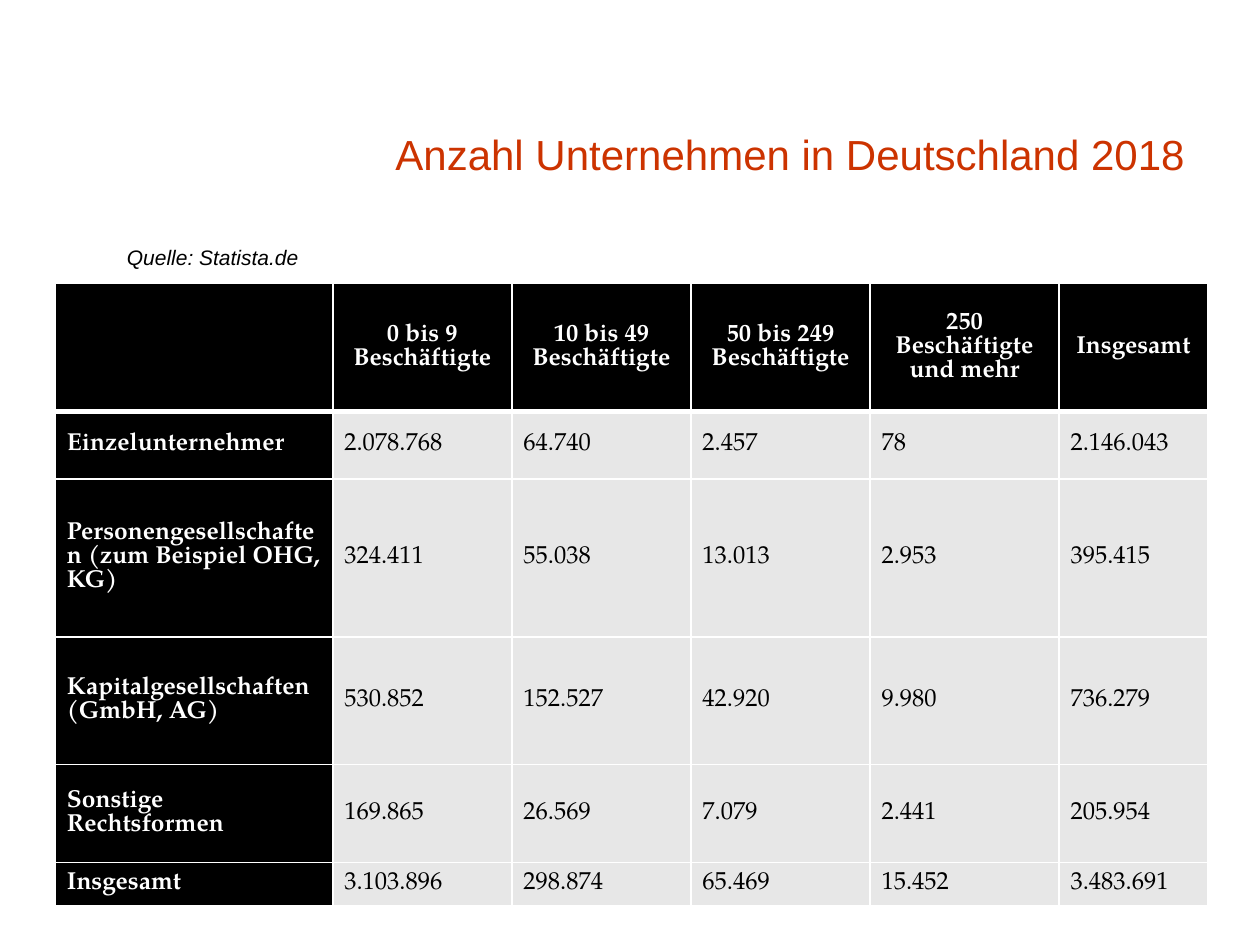
from dataclasses import dataclass

from lxml import etree
from pptx import Presentation
from pptx.dml.color import RGBColor
from pptx.enum import text as t
from pptx.oxml import ns
from pptx.util import Cm, Pt


@dataclass(frozen=True)
class Theme:
    heading_font: str = "Arial"
    table_font: str = "TeX Gyre Pagella"
    accent: str = "CC3300"
    dark: str = "000000"
    light: str = "FFFFFF"
    grey: str = "E7E7E7"
    title_size: int = 24
    source_size: int = 12
    table_size: int = 14


theme = Theme()


def add_run(paragraph, wording, font, size, color, bold=False, italic=False):
    run = paragraph.add_run()
    run.text = wording
    run.font.name, run.font.size = font, Pt(size)
    run.font.bold, run.font.italic = bold, italic
    run.font.color.rgb = RGBColor.from_string(color)


def add_border(cell, side, width):
    line = etree.SubElement(cell._tc.get_or_add_tcPr(), ns.qn(f"a:ln{side}"), w=str(Pt(width)))
    fill = etree.SubElement(line, ns.qn("a:solidFill"))
    etree.SubElement(fill, ns.qn("a:srgbClr"), val=theme.light)


presentation = Presentation()
presentation.slide_width, presentation.slide_height = Cm(25.4), Cm(19.05)
slide = presentation.slides.add_slide(presentation.slide_layouts[6])

# Title
title = slide.shapes.add_textbox(Cm(5.31), Cm(1.07), Cm(18.82), Cm(2.67)).text_frame
title.word_wrap = True
title.vertical_anchor = t.MSO_ANCHOR.BOTTOM
heading = title.paragraphs[0]
heading.alignment = t.PP_ALIGN.RIGHT
heading.line_spacing = 0.9
add_run(heading, "Anzahl Unternehmen in Deutschland 2018",
        theme.heading_font, theme.title_size, theme.accent)

# Source line
source = slide.shapes.add_textbox(Cm(2.31), Cm(4.8), Cm(12.7), Cm(0.76)).text_frame
source.word_wrap = True
add_run(source.paragraphs[0], "Quelle: Statista.de",
        theme.heading_font, theme.source_size, theme.dark, italic=True)

# Companies by legal form and number of employees
companies = [
    ["", "0 bis 9 Beschäftigte", "10 bis 49 Beschäftigte", "50 bis 249 Beschäftigte",
     "250 Beschäftigte und mehr", "Insgesamt"],
    ["Einzelunternehmer", "2.078.768", "64.740", "2.457", "78", "2.146.043"],
    ["Personengesellschaften (zum Beispiel OHG, KG)",
     "324.411", "55.038", "13.013", "2.953", "395.415"],
    ["Kapitalgesellschaften (GmbH, AG)", "530.852", "152.527", "42.920", "9.980", "736.279"],
    ["Sonstige Rechtsformen", "169.865", "26.569", "7.079", "2.441", "205.954"],
    ["Insgesamt", "3.103.896", "298.874", "65.469", "15.452", "3.483.691"],
]
column_widths = [5.59, 3.61, 3.61, 3.61, 3.81, 3]
row_heights = [2.57, 1.37, 3.18, 2.57, 1.98, 0.86]

table = slide.shapes.add_table(
    len(row_heights), len(column_widths), Cm(1.12), Cm(5.72),
    Cm(sum(column_widths)), Cm(sum(row_heights))).table
for column, width in zip(table.columns, column_widths):
    column.width = Cm(width)
for row, height in zip(table.rows, row_heights):
    row.height = Cm(height)

for r, entries in enumerate(companies):
    for c, entry in enumerate(entries):
        cell = table.cell(r, c)
        is_label = r == 0 or c == 0
        cell.margin_left = cell.margin_right = Cm(0.23)
        cell.margin_top = cell.margin_bottom = Cm(0.13)
        cell.vertical_anchor = t.MSO_ANCHOR.MIDDLE

        # White grid with a heavier rule below the header
        for side in "LRTB":
            under_header = (r, side) in ((0, "B"), (1, "T"))
            add_border(cell, side, 3 if under_header else 1)
        cell.fill.solid()
        cell.fill.fore_color.rgb = RGBColor.from_string(theme.dark if is_label else theme.grey)

        if entry:
            paragraph = cell.text_frame.paragraphs[0]
            paragraph.alignment = t.PP_ALIGN.CENTER if r == 0 else t.PP_ALIGN.LEFT
            add_run(paragraph, entry, theme.table_font, theme.table_size,
                    theme.light if is_label else theme.dark, bold=is_label)

presentation.save("out.pptx")
